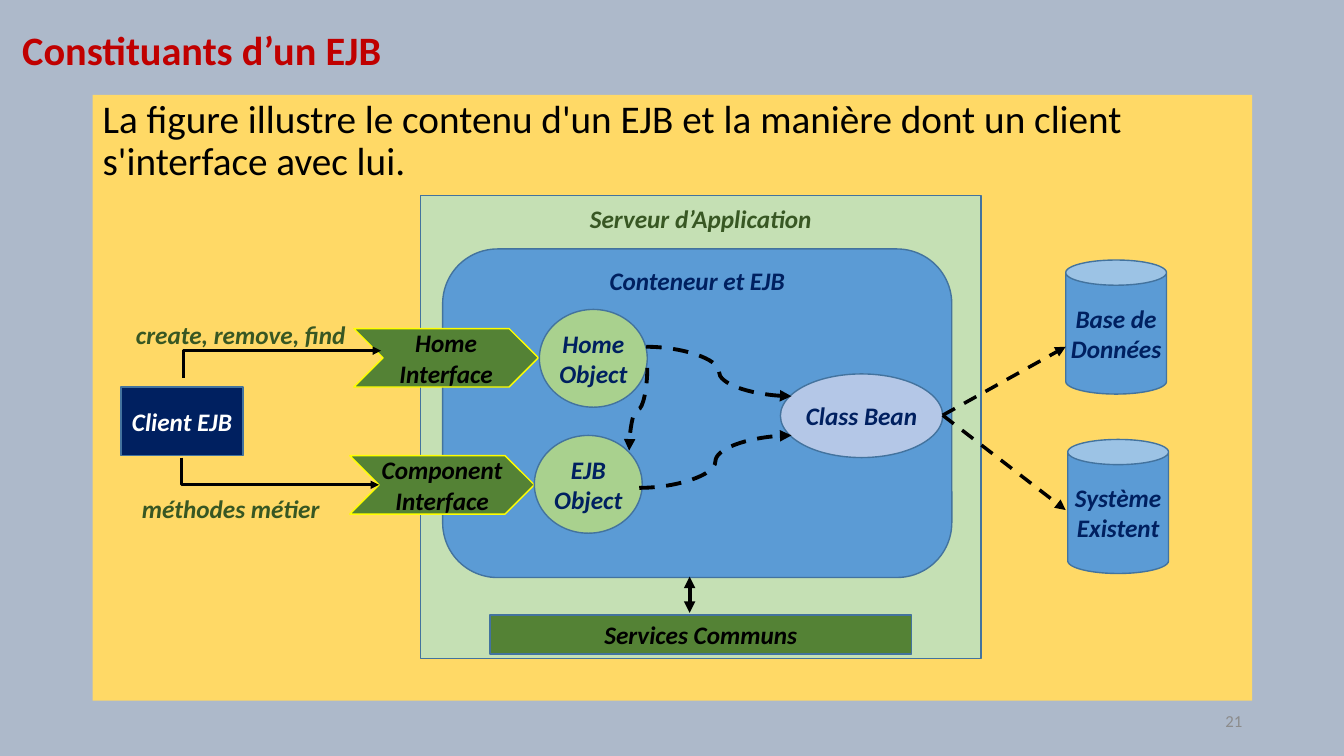
import lxml.etree
import pptx
import pptx.util
import pptx.dml.color
import pptx.enum.dml
import pptx.enum.shapes
import pptx.enum.text
import pptx.oxml.ns

Inches, Pt = pptx.util.Inches, pptx.util.Pt
RGBColor = pptx.dml.color.RGBColor
SHAPE = pptx.enum.shapes.MSO_SHAPE
CONNECTOR = pptx.enum.shapes.MSO_CONNECTOR
ALIGN = pptx.enum.text.PP_ALIGN
ANCHOR = pptx.enum.text.MSO_ANCHOR
AUTO_SIZE = pptx.enum.text.MSO_AUTO_SIZE
qn = pptx.oxml.ns.qn

FONT = "Calibri"
BACKGROUND = RGBColor(0xAD, 0xB9, 0xCA)
RED = RGBColor(0xC0, 0x00, 0x00)
GOLD = RGBColor(0xFF, 0xD9, 0x66)
GRAY = RGBColor(0x8C, 0x8C, 0x8C)
BLACK = RGBColor(0x00, 0x00, 0x00)
WHITE = RGBColor(0xFF, 0xFF, 0xFF)
YELLOW = RGBColor(0xFF, 0xFF, 0x00)
NAVY = RGBColor(0x00, 0x20, 0x60)
BLUE = RGBColor(0x5B, 0x9B, 0xD5)
OUTLINE = RGBColor(0x43, 0x73, 0x9E)
PALE_BLUE = RGBColor(0xB4, 0xC7, 0xE7)
PALE_GREEN = RGBColor(0xC5, 0xE0, 0xB4)
LIGHT_GREEN = RGBColor(0xA9, 0xD1, 0x8E)
GREEN = RGBColor(0x54, 0x82, 0x35)
DARK_GREEN = RGBColor(0x38, 0x57, 0x23)

TITLE = "Constituants d’un EJB"
INTRO = "La figure illustre le contenu d'un EJB et la manière dont un client s'interface avec lui."
PAGE = "21"

CAN = (1, 1.33)
CHEVRON = (1.83, 0.58)
OBJECT = (1.07, 0.97)

# text, preset, (left, top), (width, height), fill, outline, text colour
PARTS = [
    ("Base de Données", SHAPE.CAN, (10.57, 2.58), CAN, BLUE, OUTLINE, NAVY),
    ("Système Existent", SHAPE.CAN, (10.59, 4.36), CAN, BLUE, OUTLINE, NAVY),
    ("Serveur d’Application", SHAPE.RECTANGLE, (4.17, 1.94), (5.56, 4.59),
     PALE_GREEN, OUTLINE, DARK_GREEN),
    ("Conteneur et EJB", SHAPE.ROUNDED_RECTANGLE, (4.39, 2.47), (5.05, 3.26),
     BLUE, OUTLINE, NAVY),
    ("Home Interface", SHAPE.CHEVRON, (3.51, 3.26), CHEVRON, GREEN, YELLOW, BLACK),
    ("Component Interface", SHAPE.CHEVRON, (3.47, 4.52), CHEVRON, GREEN, YELLOW, BLACK),
    ("Home Object", SHAPE.FLOWCHART_CONNECTOR, (5.35, 3.07), OBJECT,
     LIGHT_GREEN, OUTLINE, NAVY),
    ("EJB Object", SHAPE.FLOWCHART_CONNECTOR, (5.3, 4.32), OBJECT,
     LIGHT_GREEN, OUTLINE, NAVY),
    ("Class Bean", SHAPE.OVAL, (7.74, 3.71), (1.61, 0.83), PALE_BLUE, OUTLINE, NAVY),
    ("Client EJB", SHAPE.RECTANGLE, (1.2, 3.84), (1.21, 0.68), NAVY, OUTLINE, WHITE),
    ("Services Communs", SHAPE.RECTANGLE, (4.86, 6.1), (4.18, 0.39),
     GREEN, OUTLINE, BLACK),
]
# Frames carry their label at the top, with this top margin
FRAME_MARGINS = {"Serveur d’Application": 0.08, "Conteneur et EJB": 0}

CALLS = [
    ("create, remove, find", (1.25, 3.12), (2.31, 0.4)),
    ("méthodes métier", (1.31, 4.84), (1.99, 0.4)),
]

# kind, start, end, line width, format
ARROWS = [
    (CONNECTOR.CURVE, (6.34, 4.84), (7.85, 4.32), 2.75, {"dash": True}),
    (CONNECTOR.CURVE, (6.41, 3.44), (7.85, 3.93), 2.75, {"dash": True}),
    (CONNECTOR.CURVE, (5.92, 3.97), (6.74, 4.15), 2.75, {"dash": True, "rotation": 90}),
    (CONNECTOR.ELBOW, (1.82, 3.75), (3.78, 3.48), 2, {"bend": 0}),
    (CONNECTOR.ELBOW, (1.8, 4.54), (3.76, 4.81), 2, {"bend": 0}),
    (CONNECTOR.STRAIGHT, (9.35, 4.12), (10.57, 3.44), 2.5, {"dash": True}),
    (CONNECTOR.STRAIGHT, (9.35, 4.12), (10.57, 5.06), 2.5, {"dash": True}),
    (CONNECTOR.STRAIGHT, (6.84, 5.72), (6.84, 6.08), 2.75, {"both_ends": True}),
]


def write(sp, text, size=18, color=BLACK, bold=False, italic=False, align=ALIGN.LEFT,
          anchor=ANCHOR.TOP, margins=(0.1, 0.05, 0.1, 0.05), wrap=True,
          spacing=1.0, before=0):
    tf = sp.text_frame
    tf.word_wrap = wrap
    tf.auto_size = AUTO_SIZE.NONE if wrap else AUTO_SIZE.SHAPE_TO_FIT_TEXT
    tf.vertical_anchor = anchor
    tf.margin_left, tf.margin_top, tf.margin_right, tf.margin_bottom = map(Inches, margins)
    p = tf.paragraphs[0]
    p.alignment, p.line_spacing, p.space_before = align, spacing, Pt(before)
    r = p.add_run()
    r.text = text
    r.font.name, r.font.size = FONT, Pt(size)
    r.font.bold, r.font.italic = bold, italic
    r.font.color.rgb = color


def add_box(s, preset, at, size, fill, outline=None):
    sp = s.shapes.add_shape(preset, *map(Inches, at + size))
    sp.shadow.inherit = False
    sp.fill.solid()
    sp.fill.fore_color.rgb = fill
    if outline is None:
        sp.line.fill.background()
    else:
        sp.line.color.rgb = outline
        sp.line.width = Pt(1)
    return sp


def add_arrow(s, kind, start, end, width, dash=False, rotation=0, bend=None,
              both_ends=False):
    """bend is the place of the elbow as a share of the width."""
    cx = s.shapes.add_connector(kind, *map(Inches, start + end))
    cx.line.color.rgb = BLACK
    cx.line.width = Pt(width)
    if dash:
        cx.line.dash_style = pptx.enum.dml.MSO_LINE.DASH
    sp_pr = cx._element.spPr
    ln = sp_pr.find(qn("a:ln"))
    for tag in (["a:headEnd"] if both_ends else []) + ["a:tailEnd"]:
        lxml.etree.SubElement(ln, qn(tag), type="triangle")
    if rotation:
        cx.rotation = rotation
        sp_pr.find(qn("a:xfrm")).set("rot", str(rotation * 60000))
    if bend is not None:
        guides = sp_pr.find(qn("a:prstGeom")).find(qn("a:avLst"))
        lxml.etree.SubElement(guides, qn("a:gd"), name="adj1",
                              fmla=f"val {int(bend * 100000)}")
    lxml.etree.SubElement(sp_pr, qn("a:effectLst"))


def main():
    prs = pptx.Presentation()
    prs.slide_width, prs.slide_height = Inches(13.33), Inches(7.5)
    s = prs.slides.add_slide(prs.slide_layouts[5])
    s.background.fill.solid()
    s.background.fill.fore_color.rgb = BACKGROUND

    title = s.shapes.title
    title.left, title.top, title.width, title.height = map(Inches, (0.12, 0.24, 10.45, 0.56))
    write(title, TITLE, size=28.8, color=RED, bold=True, anchor=ANCHOR.MIDDLE, spacing=0.9)

    panel = add_box(s, SHAPE.RECTANGLE, (0.92, 0.94), (11.5, 6.01), GOLD)
    write(panel, INTRO, size=28, spacing=0.9, before=10)

    page = s.shapes.add_textbox(*map(Inches, (9.42, 6.95, 3, 0.4)))
    write(page, PAGE, size=12, color=GRAY, align=ALIGN.RIGHT, anchor=ANCHOR.MIDDLE)

    for text, preset, at, size, fill, outline, color in PARTS:
        sp = add_box(s, preset, at, size, fill, outline)
        write(sp, text, color=color, bold=True, italic=True, align=ALIGN.CENTER,
              anchor=ANCHOR.TOP if text in FRAME_MARGINS else ANCHOR.MIDDLE,
              margins=(0, FRAME_MARGINS.get(text, 0), 0, 0))

    for text, at, size in CALLS:
        label = s.shapes.add_textbox(*map(Inches, at + size))
        write(label, text, color=DARK_GREEN, bold=True, italic=True, wrap=False)

    for kind, start, end, width, style in ARROWS:
        add_arrow(s, kind, start, end, width, **style)

    prs.save("out.pptx")


if __name__ == "__main__":
    main()
